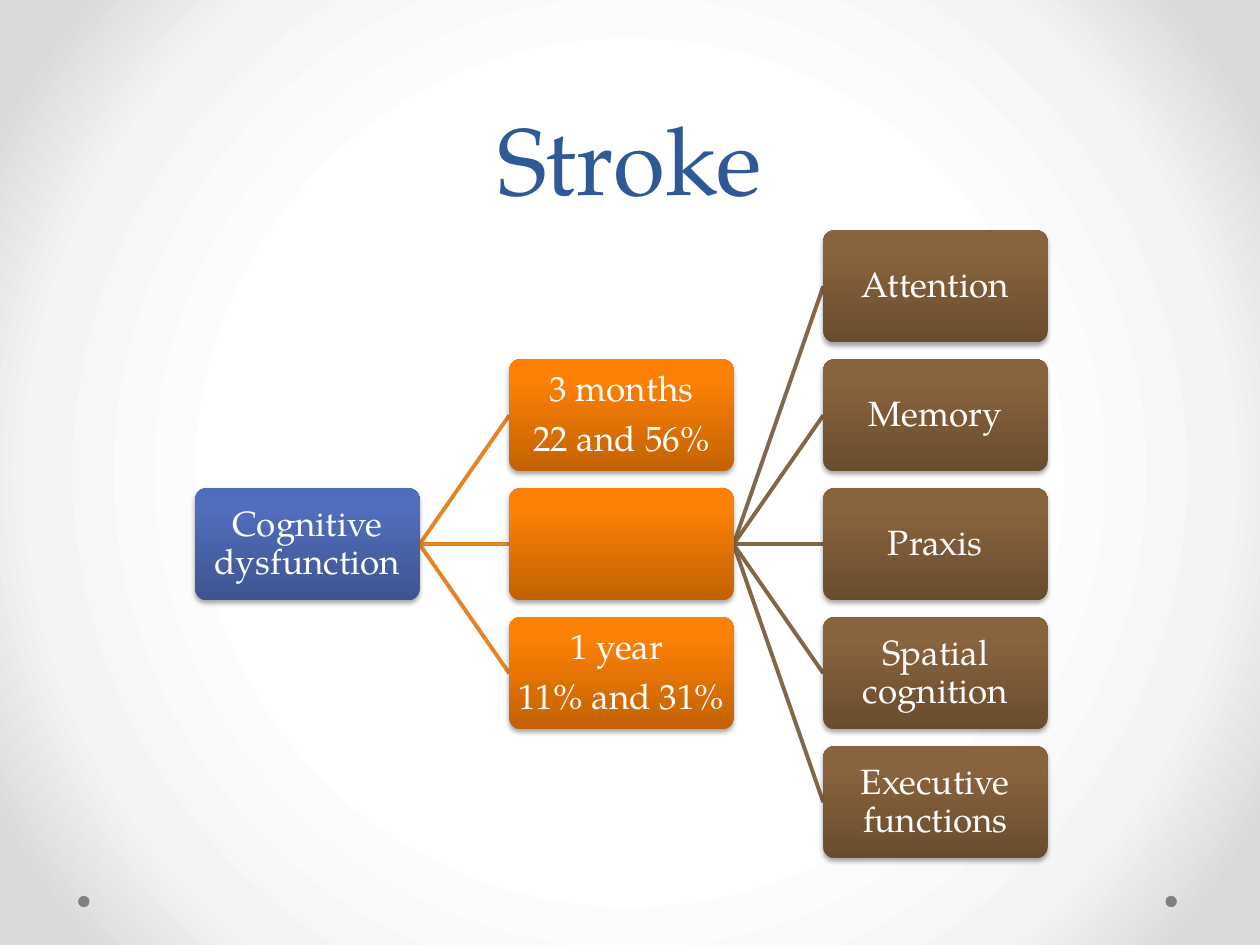
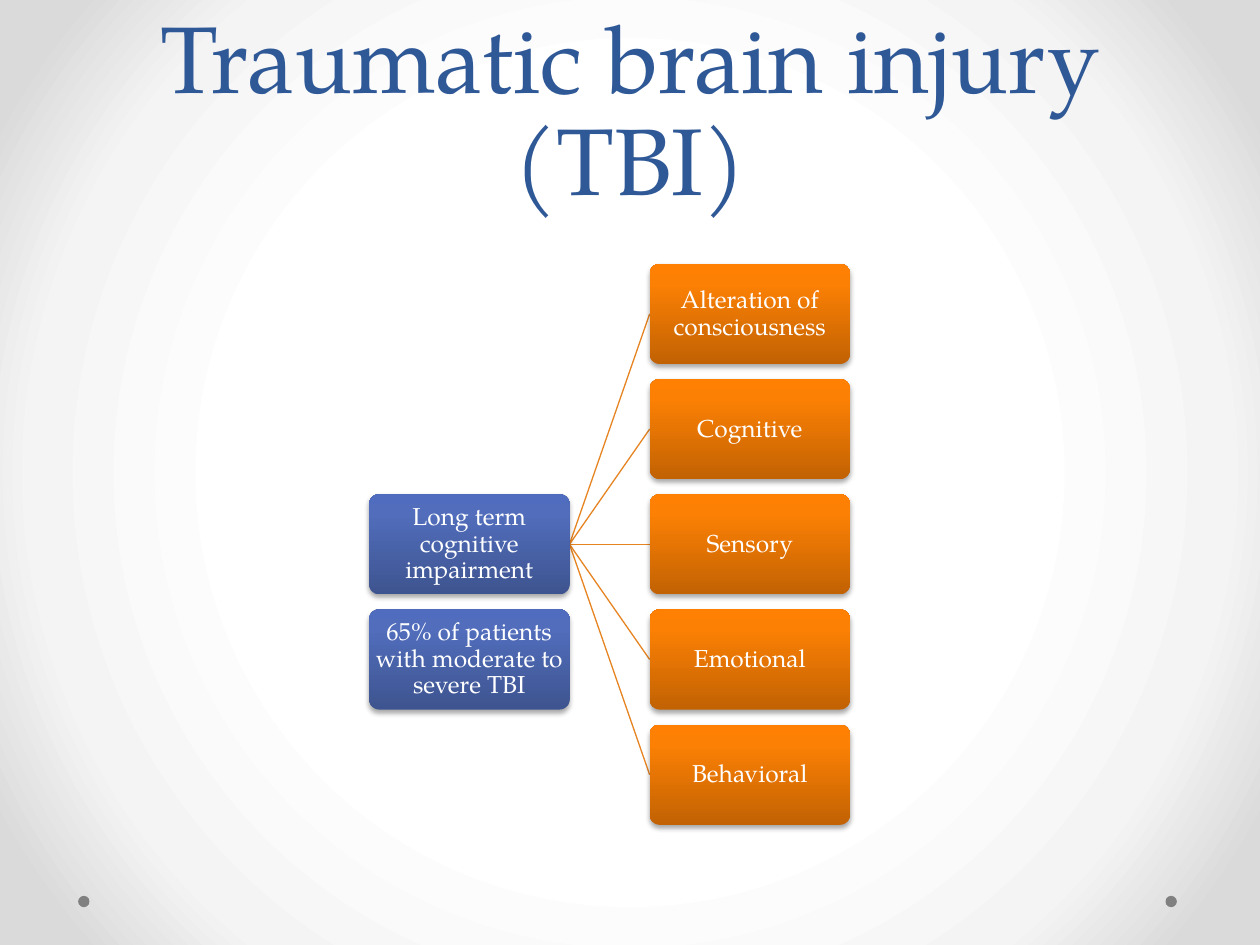
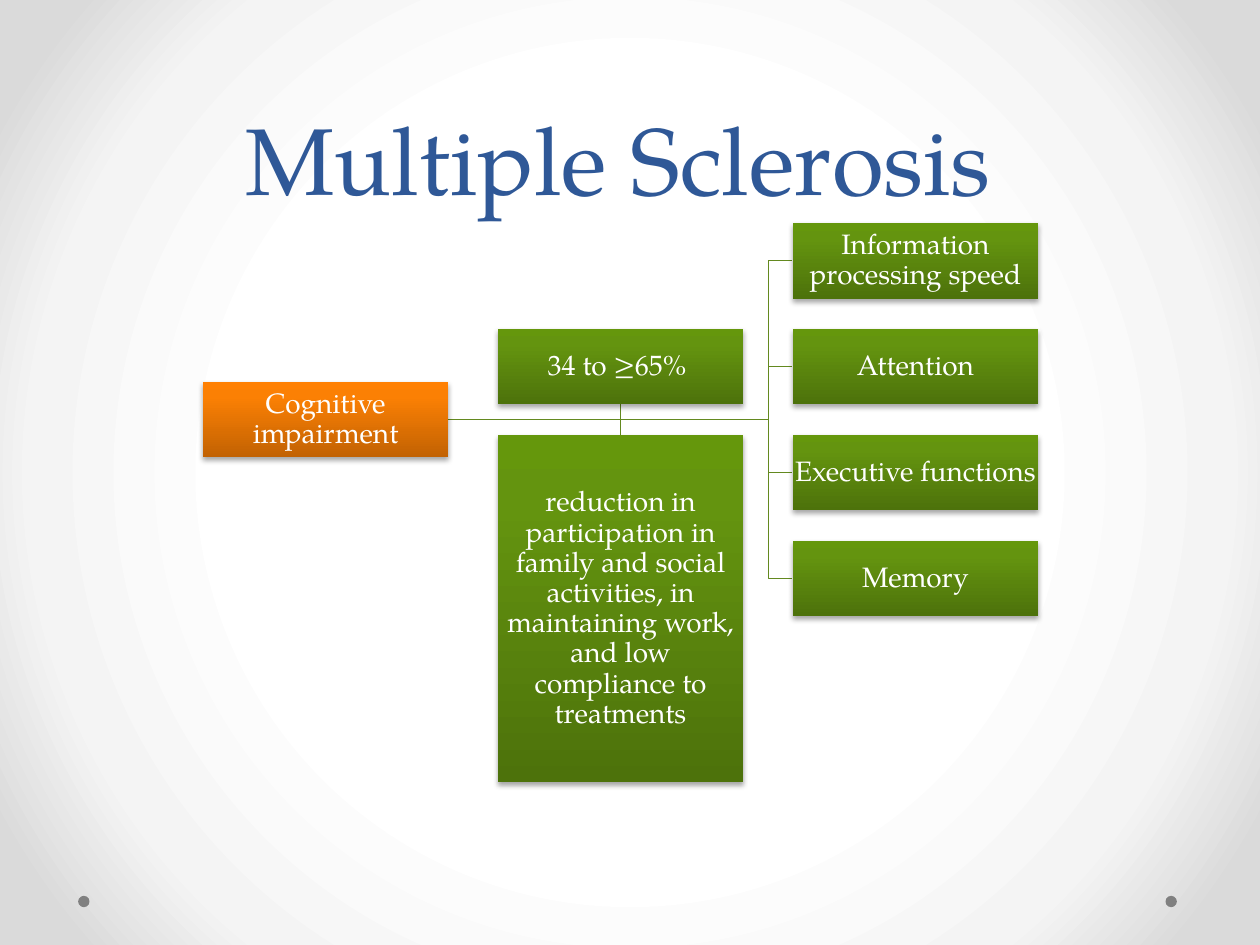
import collections

import pptx
import pptx.dml.color
import pptx.enum.shapes
import pptx.enum.text
import pptx.oxml
import pptx.oxml.ns
import pptx.util

Inches = pptx.util.Inches
Pt = pptx.util.Pt
Shapes = pptx.enum.shapes.MSO_SHAPE
Anchor = pptx.enum.text.MSO_ANCHOR
CENTER = pptx.enum.text.PP_ALIGN.CENTER

FONT = "TeX Gyre Pagella"
TITLE, WHITE, DOT = "2F5897", "FFFFFF", "808080"
BLUE = [(0, "3E5490"), (80, "516DBB"), (100, "4F6CBE")]
ORANGE = [(0, "C26203"), (80, "FB8004"), (100, "FF8002")]
BROWN = [(0, "694C2F"), (80, "89633D"), (100, "8B633C")]
GREEN = [(0, "4D720B"), (80, "64940F"), (100, "65970C")]
BACKDROP = [(50, "FFFFFF"), (76, "F4F4F4"), (92, "DADADA")]
ORANGE_LINE, BROWN_LINE, GREEN_LINE = "E68422", "846648", "63891F"
UPWARD = '<a:lin ang="16200000" scaled="0"/>'
RADIAL = '<a:path path="circle"><a:fillToRect l="50000" t="50000" r="50000" b="50000"/></a:path>'

Tree = collections.namedtuple("Tree", "left middle width size weight")


def color(value):
    return pptx.dml.color.RGBColor.from_string(value)


def assign(target, values):
    for name, value in values.items():
        setattr(target, name, value)


def element(tag, body, attributes=""):
    namespace = pptx.oxml.ns.nsdecls("a")
    return pptx.oxml.parse_xml(f"<a:{tag} {namespace} {attributes}>{body}</a:{tag}>")


def gradient(stops, direction):
    marks = "".join(
        f'<a:gs pos="{position * 1000}"><a:srgbClr val="{value}"/></a:gs>'
        for position, value in stops
    )
    return element("gradFill", f"<a:gsLst>{marks}</a:gsLst>{direction}", 'rotWithShape="1"')


def replace_fill(parent, fill):
    solid = parent.find(pptx.oxml.ns.qn("a:solidFill"))
    parent.replace(solid, fill)


class Deck:
    def __init__(self):
        self.file = pptx.Presentation()
        assign(self.file, {"slide_width": Inches(10), "slide_height": Inches(7.5)})
        self.page = None

    def start_page(self, title):
        self.page = self.file.slides.add_slide(self.file.slide_layouts[6])
        self.page.background.fill.solid()
        properties = self.page.element.cSld.find(".//" + pptx.oxml.ns.qn("p:bgPr"))
        replace_fill(properties, gradient(BACKDROP, RADIAL))
        for left in (9.25, 0.62):
            self.dot(left, 7.11, 0.09)
        box = self.page.shapes.add_textbox(Inches(0.5), Inches(0), Inches(9), Inches(1.75))
        self.label(box, title, 54, TITLE, {"line_spacing": Pt(58)}, {"vertical_anchor": Anchor.BOTTOM})

    def dot(self, left, top, size):
        dot = self.page.shapes.add_shape(
            Shapes.OVAL, Inches(left), Inches(top), Inches(size), Inches(size)
        )
        dot.shadow.inherit = False
        dot.fill.solid()
        dot.fill.fore_color.rgb = color(DOT)
        dot.line.fill.background()

    def label(self, box, text, size, ink, spacing, layout):
        frame = box.text_frame
        assign(frame, {"word_wrap": True, **layout})
        frame.text = text
        for para in frame.paragraphs:
            assign(para, {"alignment": CENTER, **spacing})
            for span in para.runs:
                assign(span.font, {"name": FONT, "size": Pt(size)})
                span.font.color.rgb = color(ink)

    def card(self, left, top, width, height, text, size, stops, kind=Shapes.RECTANGLE):
        box = self.page.shapes.add_shape(
            kind, Inches(left), Inches(top), Inches(width), Inches(height)
        )
        if kind == Shapes.ROUNDED_RECTANGLE:
            box.adjustments[0] = 0.1
        box.line.fill.background()
        box.fill.solid()
        properties = box.element.spPr
        replace_fill(properties, gradient(stops, UPWARD))
        box.shadow.inherit = False
        shade = element(
            "outerShdw",
            '<a:srgbClr val="000000"><a:alpha val="35000"/></a:srgbClr>',
            f'blurRad="{Pt(3.1)}" dist="{Pt(1.8)}" dir="5400000" rotWithShape="0"',
        )
        properties.find(pptx.oxml.ns.qn("a:effectLst")).append(shade)
        margins = dict.fromkeys(
            ("margin_left", "margin_top", "margin_right", "margin_bottom"), Inches(0.01)
        )
        spacing = {"line_spacing": 0.9, "space_after": Pt(0.35 * size)}
        self.label(box, text, size, WHITE, spacing, {"vertical_anchor": Anchor.MIDDLE, **margins})

    def tree_card(self, tree, column, row, text, stops):
        height = tree.width / 2
        left = tree.left + 1.4 * tree.width * column
        top = tree.middle + 1.15 * height * row - height / 2
        self.card(left, top, tree.width, height, text, tree.size, stops, Shapes.ROUNDED_RECTANGLE)

    def tree_branches(self, tree, column, rows, ink):
        start = tree.left + tree.width * (1 + 1.4 * column)
        for row in rows:
            branch = self.page.shapes.add_connector(
                pptx.enum.shapes.MSO_CONNECTOR.STRAIGHT,
                Inches(start),
                Inches(tree.middle),
                Inches(start + 0.4 * tree.width),
                Inches(tree.middle + 0.575 * tree.width * row),
            )
            branch.line.color.rgb = color(ink)
            branch.line.width = Pt(tree.weight)
            branch.element.spPr.append(element("effectLst", ""))

    def elbow(self, points, ink, weight):
        corners = [(Inches(x), Inches(y)) for x, y in points]
        builder = self.page.shapes.build_freeform(*corners[0])
        builder.add_line_segments(corners[1:], close=False)
        line = builder.convert_to_shape()
        line.shadow.inherit = False
        line.fill.background()
        line.line.color.rgb = color(ink)
        line.line.width = Pt(weight)


def stroke_page(deck):
    deck.start_page("Stroke")
    tree = Tree(1.55, 4.32, 1.78, 20, 2.25)
    periods = ["3 months\n22 and 56%", "", "1 year \n11% and 31%"]
    domains = ["Attention", "Memory", "Praxis", "Spatial cognition", "Executive functions"]
    deck.tree_branches(tree, 0, range(-1, 2), ORANGE_LINE)
    deck.tree_branches(tree, 1, range(-2, 3), BROWN_LINE)
    deck.tree_card(tree, 0, 0, "Cognitive dysfunction", BLUE)
    for row, period in enumerate(periods, -1):
        deck.tree_card(tree, 1, row, period, ORANGE)
    for row, domain in enumerate(domains, -2):
        deck.tree_card(tree, 2, row, domain, BROWN)


def injury_page(deck):
    deck.start_page("Traumatic brain injury (TBI)")
    tree = Tree(2.93, 4.32, 1.59, 14, 0.75)
    causes = ["Long term cognitive impairment", "65% of patients with moderate to severe TBI"]
    effects = ["Alteration of consciousness", "Cognitive", "Sensory", "Emotional", "Behavioral"]
    deck.tree_branches(tree, 0, range(-2, 3), ORANGE_LINE)
    for row, cause in enumerate(causes):
        deck.tree_card(tree, 0, row, cause, BLUE)
    for row, effect in enumerate(effects, -2):
        deck.tree_card(tree, 1, row, effect, ORANGE)


def sclerosis_page(deck):
    deck.start_page("Multiple Sclerosis ")
    width, height, size, pitch = 1.95, 0.6, 16, 0.84
    root_left, middle_left, right_left = (1.61 + 2.34 * column for column in range(3))
    first_top, axis = 1.77, 3.33
    start = (root_left + width, axis)
    center, trunk = middle_left + width / 2, 6.1
    domains = ["Information processing speed", "Attention", "Executive functions", "Memory"]
    tops = [first_top + pitch * row for row in range(len(domains))]
    for end in (tops[2], tops[1] + height):
        deck.elbow([start, (center, axis), (center, end)], GREEN_LINE, 0.75)
    for top in tops:
        level = top + height / 2
        deck.elbow([start, (trunk, axis), (trunk, level), (right_left, level)], GREEN_LINE, 0.75)
    deck.card(root_left, axis - height / 2, width, height, "Cognitive impairment", size, ORANGE)
    for top, domain in zip(tops, domains):
        deck.card(right_left, top, width, height, domain, size, GREEN)
    deck.card(middle_left, tops[1], width, height, "34 to ≥65% ", size, GREEN)
    consequence = (
        "reduction in participation in family and social activities, "
        "in maintaining work, and low compliance to treatments"
    )
    deck.card(middle_left, tops[2], width, 2.76, consequence, size, GREEN)


def main():
    deck = Deck()
    for build in (stroke_page, injury_page, sclerosis_page):
        build(deck)
    deck.file.save("out.pptx")


if __name__ == "__main__":
    main()
